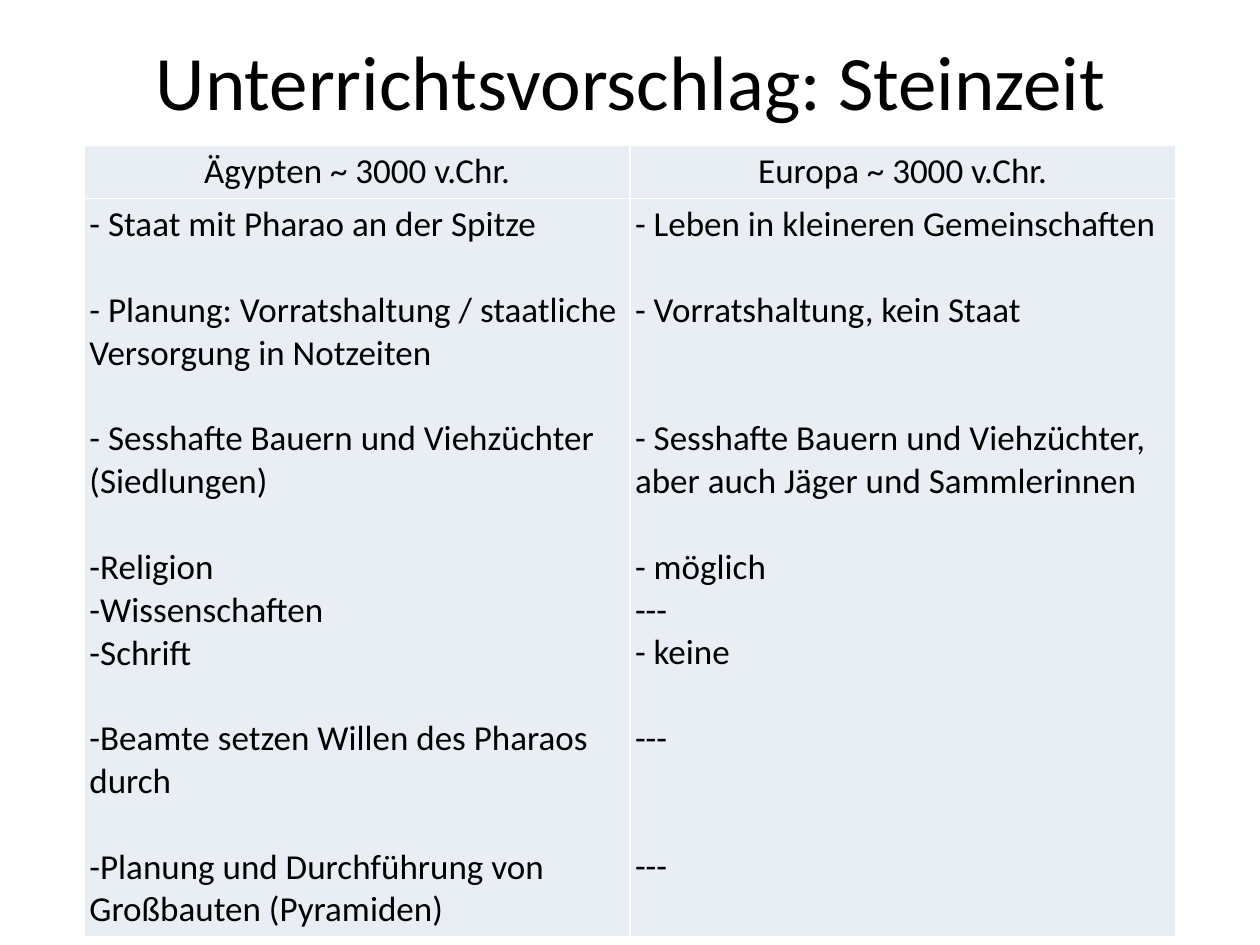
from typing import NamedTuple

from lxml import etree
from pptx import Presentation, util as u
from pptx.dml.color import RGBColor
from pptx.enum import text
from pptx.oxml import ns

COLORS = {"ink": "000000", "cell": "E9EDF4", "rule": "FFFFFF"}
FONT = "Calibri"
WIDTH, HEIGHT = u.Inches(10), u.Inches(7.5)
BODY_SIZE = 20
LINE = 1.22 * BODY_SIZE  # height of one text line in points


class Item(NamedTuple):
    text: str
    gap: int = 0  # free lines above the item


class Column(NamedTuple):
    heading: str
    items: list[Item]


COLUMNS = [
    Column("Ägypten ~ 3000 v.Chr.", [
        Item("- Staat mit Pharao an der Spitze"),
        Item("- Planung: Vorratshaltung / staatliche Versorgung in Notzeiten", 1),
        Item("- Sesshafte Bauern und Viehzüchter (Siedlungen)", 1),
        Item("-Religion", 1),
        Item("-Wissenschaften"),
        Item("-Schrift"),
        Item("-Beamte setzen Willen des Pharaos durch", 1),
        Item("-Planung und Durchführung von Großbauten (Pyramiden)", 1),
    ]),
    Column("Europa ~ 3000 v.Chr.", [
        Item("- Leben in kleineren Gemeinschaften"),
        Item("- Vorratshaltung, kein Staat", 1),
        Item("- Sesshafte Bauern und Viehzüchter, aber auch Jäger und Sammlerinnen", 2),
        Item("- möglich", 1),
        Item("---"),
        Item("- keine"),
        Item("---", 1),
        Item("---", 2),
    ]),
]


def style_para(para, size: float, align) -> None:
    para.alignment = align
    for span in para.runs:
        span.font.name = FONT
        span.font.size = u.Pt(size)
        span.font.color.rgb = RGBColor.from_string(COLORS["ink"])


def add_borders(cell) -> None:
    """Draw a thin rule on every side, ahead of the fill in the cell's XML."""
    props = cell._tc.get_or_add_tcPr()
    for index, side in enumerate(("lnL", "lnR", "lnT", "lnB")):
        line = etree.Element(ns.qn(f"a:{side}"), w=str(u.Pt(1)))
        fill = etree.SubElement(line, ns.qn("a:solidFill"))
        etree.SubElement(fill, ns.qn("a:srgbClr"), val=COLORS["rule"])
        props.insert(index, line)


def fill_cell(cell, items: list[Item], align) -> None:
    cell.margin_left = cell.margin_right = u.Inches(0.04)
    cell.margin_top = cell.margin_bottom = u.Inches(0.04)
    cell.fill.solid()
    cell.fill.fore_color.rgb = RGBColor.from_string(COLORS["cell"])
    add_borders(cell)
    cell.text_frame.text = "\n".join(item.text for item in items)
    for para, item in zip(cell.text_frame.paragraphs, items):
        para.space_before = u.Pt(item.gap * LINE)
        style_para(para, BODY_SIZE, align)


def add_title(page, wording: str) -> None:
    box = page.shapes.title
    box.left, box.top = int(WIDTH * 0.051), int(HEIGHT * 0.017)
    box.width, box.height = int(WIDTH * 0.9), int(HEIGHT * 0.135)
    box.text_frame.text = wording
    box.text_frame.vertical_anchor = text.MSO_ANCHOR.MIDDLE
    style_para(box.text_frame.paragraphs[0], 44, text.PP_ALIGN.CENTER)


def add_comparison(page, columns: list[Column]) -> None:
    left, top = int(WIDTH * 0.067), int(HEIGHT * 0.154)
    row_heights = u.Inches(0.41), u.Inches(5.86)
    table = page.shapes.add_table(
        2, len(columns), left, top, WIDTH - 2 * left, sum(row_heights)).table
    table.first_row = table.horz_banding = False
    for row, height in zip(table.rows, row_heights):
        row.height = height
    for index, column in enumerate(columns):
        fill_cell(table.cell(0, index), [Item(column.heading)], text.PP_ALIGN.CENTER)
        fill_cell(table.cell(1, index), column.items, text.PP_ALIGN.LEFT)


def main() -> None:
    deck = Presentation()
    deck.slide_width, deck.slide_height = WIDTH, HEIGHT
    page = deck.slides.add_slide(deck.slide_layouts[5])  # title only

    # Heading
    add_title(page, "Unterrichtsvorschlag: Steinzeit")
    # Two cultures side by side
    add_comparison(page, COLUMNS)

    deck.save("out.pptx")


if __name__ == "__main__":
    main()
